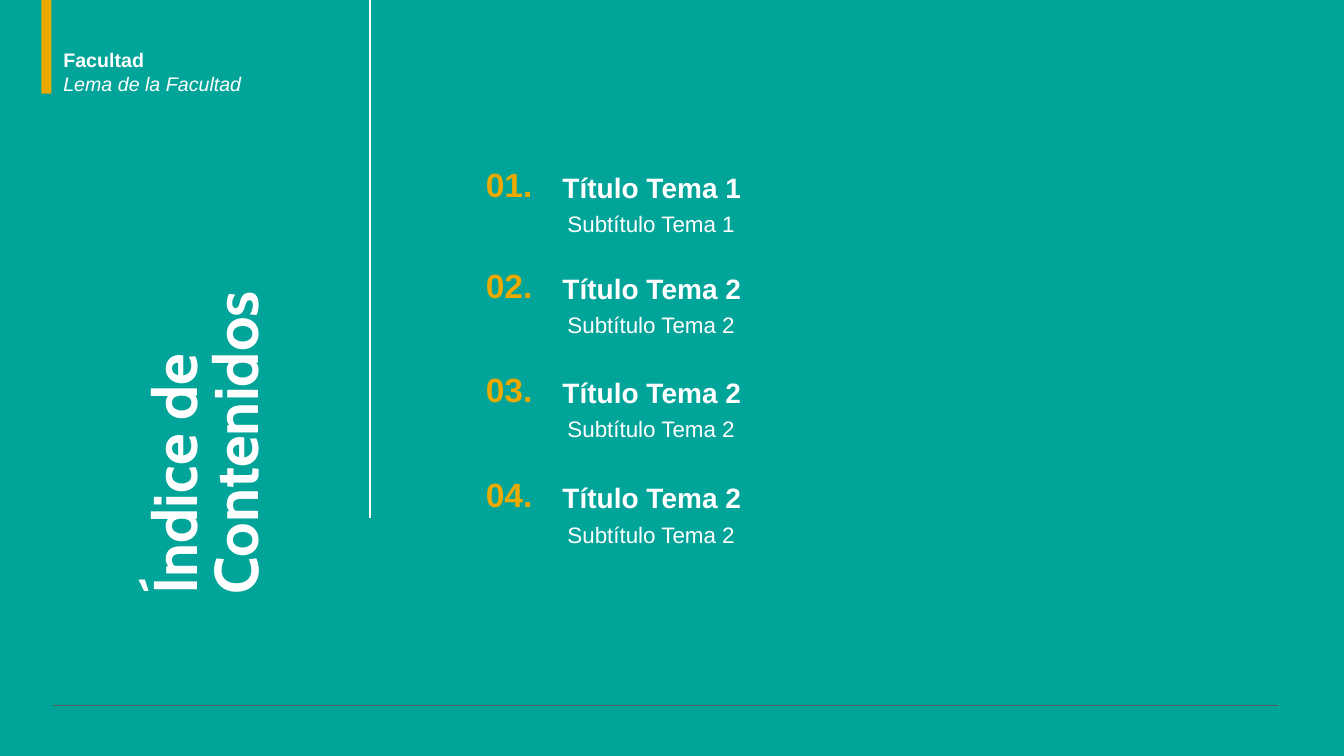
from pptx import Presentation
from pptx.dml.color import RGBColor
from pptx.enum.shapes import MSO_CONNECTOR, MSO_SHAPE
from pptx.enum.text import MSO_ANCHOR, MSO_AUTO_SIZE, PP_ALIGN
from pptx.oxml.ns import qn
from pptx.util import Inches, Pt
from lxml import etree

WHITE, GOLD, TEAL, GRAY = "FFFFFF", "EAAA00", "00A499", "595959"


def color(hex_value):
    return RGBColor.from_string(hex_value)


def write(box, text, size, hex_value=WHITE, bold=False, font="Arial", spacing=None):
    frame = box.text_frame
    frame.text = text
    frame.word_wrap = True
    for para in frame.paragraphs:
        para.alignment = PP_ALIGN.LEFT
        if spacing:
            para.line_spacing = Pt(spacing)
        for span in para.runs:
            span.font.name = font
            span.font.size = Pt(size)
            span.font.bold = bold
            span.font.color.rgb = color(hex_value)
    return frame


deck = Presentation()
deck.slide_width, deck.slide_height = Inches(13.33), Inches(7.5)
page = deck.slides.add_slide(deck.slide_layouts[5])
page.background.fill.solid()
page.background.fill.fore_color.rgb = color(TEAL)

# Vertical title
title = page.shapes.title
title.left, title.top = Inches(0.11), Inches(3.79)
title.width, title.height = Inches(3.95), Inches(0.46)
title.rotation = 270
frame = write(title, "Índice de\nContenidos", 44, bold=True, font="Cabin", spacing=43)
frame.auto_size = MSO_AUTO_SIZE.NONE
frame.vertical_anchor = MSO_ANCHOR.MIDDLE

# Footer rule and column divider
rules = [
    (0.53, 7, 12.68, 7, GRAY, 0.5),
    (3.67, 0, 3.67, 5.14, WHITE, 1),
]
for x1, y1, x2, y2, hex_value, weight in rules:
    rule = page.shapes.add_connector(
        MSO_CONNECTOR.STRAIGHT, Inches(x1), Inches(y1), Inches(x2), Inches(y2))
    rule.line.color.rgb = color(hex_value)
    rule.line.width = Pt(weight)
    etree.SubElement(rule._element.spPr, qn("a:effectLst"))

# Topics: number, title and subtitle
topics = [
    (1.67, "01.", "Título Tema 1", "Subtítulo Tema 1"),
    (2.67, "02.", "Título Tema 2", "Subtítulo Tema 2"),
    (3.7, "03.", "Título Tema 2", "Subtítulo Tema 2"),
    (4.75, "04.", "Título Tema 2", "Subtítulo Tema 2"),
]
for top, number, heading, subheading in topics:
    parts = [
        (4.72, top, 0.75, 0.41, number, 24, GOLD, True),
        (5.48, top, 5.75, 0.41, heading, 20, WHITE, True),
        (5.53, top + 0.33, 5.75, 0.39, subheading, 16, WHITE, False),
    ]
    for left, y, width, height, text, size, hex_value, bold in parts:
        box = page.shapes.add_textbox(
            Inches(left), Inches(y), Inches(width), Inches(height))
        frame = write(box, text, size, hex_value, bold, spacing=22)
        frame.auto_size = MSO_AUTO_SIZE.SHAPE_TO_FIT_TEXT

# Institution name and motto
box = page.shapes.add_textbox(Inches(0.53), Inches(0.43), Inches(2.06), Inches(0.57))
frame = write(box, "Facultad\nLema de la Facultad", 14)
frame.word_wrap = False
frame.auto_size = MSO_AUTO_SIZE.SHAPE_TO_FIT_TEXT
name, motto = frame.paragraphs
name.runs[0].font.bold = True
motto.runs[0].font.italic = True

# Gold accent bar
bar = page.shapes.add_shape(
    MSO_SHAPE.RECTANGLE, Inches(0.41), Inches(0), Inches(0.1), Inches(0.93))
bar.shadow.inherit = False
bar.fill.solid()
bar.fill.fore_color.rgb = color(GOLD)
bar.line.fill.background()

deck.save("out.pptx")
